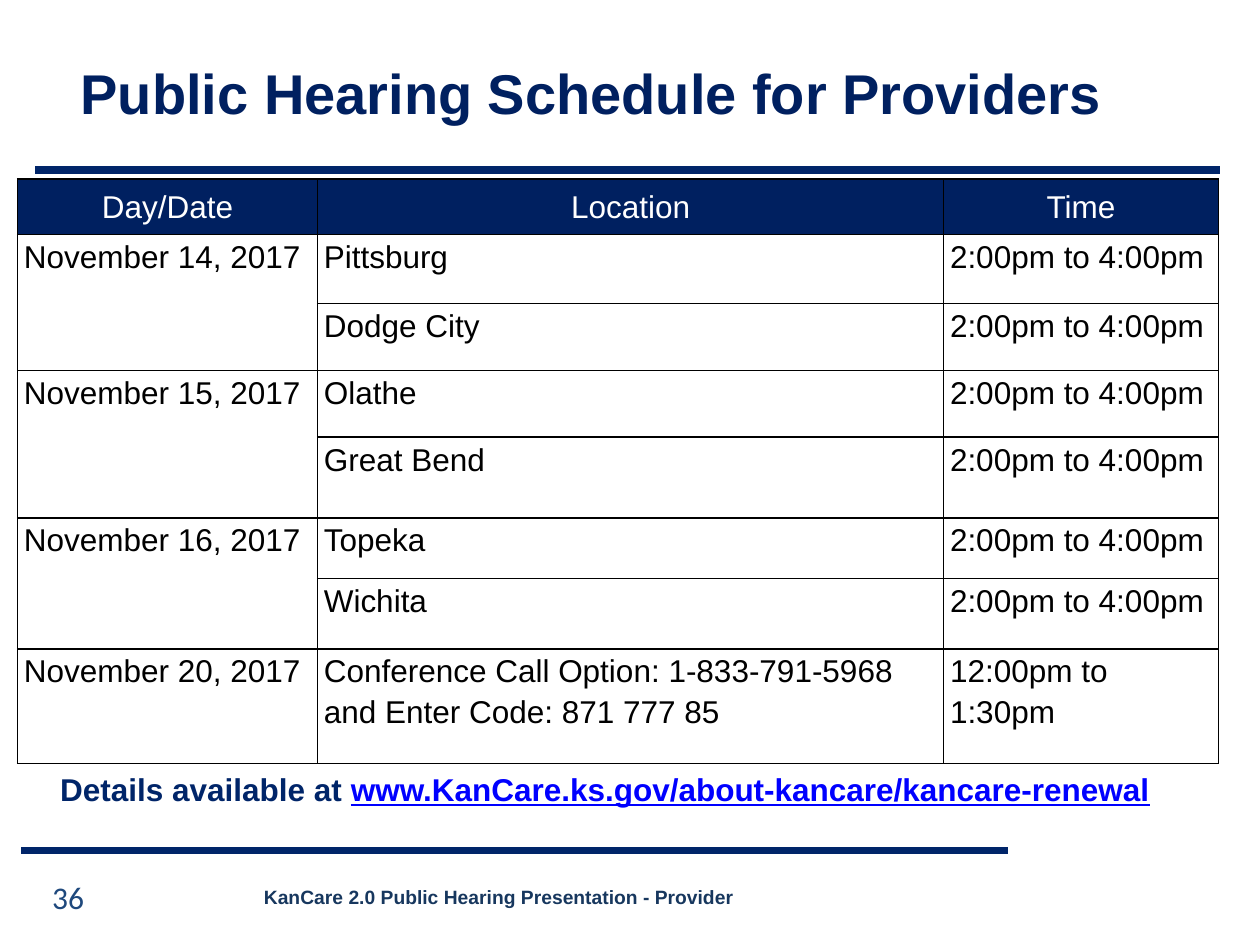
from dataclasses import dataclass

from lxml.etree import SubElement
from pptx import Presentation
from pptx.dml.color import RGBColor
from pptx.enum.text import MSO_ANCHOR as Anchor, PP_ALIGN as Align
from pptx.oxml.ns import qn
from pptx.util import Inches, Pt

NAVY, BLUE, BLACK, WHITE = "002060", "002569", "000000", "FFFFFF"
COLUMN_WIDTHS = (2.38, 4.97, 2.18)
ROW_HEIGHTS = (0.44, 0.55, 0.53, 0.53, 0.64, 0.48, 0.56, 0.91)
HEADINGS = ("Day/Date", "Location", "Time")
AFTERNOON = "2:00pm to 4:00pm"


@dataclass
class Hearing:
    location: str
    time: str = AFTERNOON


@dataclass
class Rule:
    left: float
    right: float
    top: float


SCHEDULE = {
    "November 14, 2017": [Hearing("Pittsburg"), Hearing("Dodge City")],
    "November 15, 2017": [Hearing("Olathe"), Hearing("Great Bend")],
    "November 16, 2017": [Hearing("Topeka"), Hearing("Wichita")],
    "November 20, 2017": [
        Hearing("Conference Call Option: 1-833-791-5968 and Enter Code: 871 777 85",
                "12:00pm to 1:30pm"),
    ],
}
RULES = (Rule(0.17, 8, 6.75), Rule(0.28, 9.68, 1.35))


def rgb(color: str) -> RGBColor:
    return RGBColor.from_string(color)


def style_font(font, size: float, color: str, bold: bool = False, name: str = "Arial") -> None:
    font.name, font.size, font.bold = name, Pt(size), bold
    font.color.rgb = rgb(color)


def add_text(slide, box: tuple, text: str, align=Align.LEFT, anchor=Anchor.TOP):
    """Add a wrapping text box and return its paragraph."""
    frame = slide.shapes.add_textbox(*map(Inches, box)).text_frame
    frame.word_wrap = True
    frame.vertical_anchor = anchor
    paragraph = frame.paragraphs[0]
    paragraph.text, paragraph.alignment = text, align
    return paragraph


def add_rule(slide, rule: Rule) -> None:
    top = Inches(rule.top)
    line = slide.shapes.add_connector(1, Inches(rule.left), top, Inches(rule.right), top)
    line.line.color.rgb = rgb(BLUE)
    line.line.width = Pt(4.5)
    SubElement(line._element.spPr, qn("a:effectLst"))


def add_borders(cell) -> None:
    """Draw the four cell borders, which must come before the fill."""
    properties = cell._tc.get_or_add_tcPr()
    for side in ("lnL", "lnR", "lnT", "lnB"):
        border = SubElement(properties, qn(f"a:{side}"), w=str(Pt(1)))
        fill = SubElement(border, qn("a:solidFill"))
        SubElement(fill, qn("a:srgbClr"), val=BLACK)


def fill_cell(cell, text: str, header: bool = False) -> None:
    cell.text = text
    cell.margin_left = cell.margin_right = Inches(0.05)
    cell.margin_top, cell.margin_bottom = 0, Inches(0.03)
    cell.vertical_anchor = Anchor.MIDDLE if header else Anchor.TOP
    paragraph = cell.text_frame.paragraphs[0]
    paragraph.alignment = Align.CENTER if header else Align.LEFT
    paragraph.line_spacing = 1.15
    paragraph.space_after = Pt(3 if header else 6)
    style_font(paragraph.font, 18, WHITE if header else BLACK)


def add_schedule(slide) -> None:
    frame = slide.shapes.add_table(len(ROW_HEIGHTS), len(COLUMN_WIDTHS), Inches(0.14),
                                   Inches(1.42), Inches(sum(COLUMN_WIDTHS)),
                                   Inches(sum(ROW_HEIGHTS)))
    table = frame.table
    table.horz_banding = table.first_row = False
    for column, width in zip(table.columns, COLUMN_WIDTHS):
        column.width = Inches(width)
    for index, (row, height) in enumerate(zip(table.rows, ROW_HEIGHTS)):
        row.height = Inches(height)
        for cell in row.cells:
            add_borders(cell)
            cell.fill.solid()
            cell.fill.fore_color.rgb = rgb(WHITE if index else NAVY)

    for column, heading in enumerate(HEADINGS):
        fill_cell(table.cell(0, column), heading, header=True)
    row = 1
    for date, hearings in SCHEDULE.items():
        fill_cell(table.cell(row, 0), date)
        if len(hearings) > 1:
            table.cell(row, 0).merge(table.cell(row + len(hearings) - 1, 0))
        for hearing in hearings:
            fill_cell(table.cell(row, 1), hearing.location)
            fill_cell(table.cell(row, 2), hearing.time)
            row += 1


def add_title(slide, text: str) -> None:
    title = slide.shapes.title
    title.left, title.top, title.width, title.height = map(Inches, (0.54, 0.17, 8.92, 1.08))
    frame = title.text_frame
    frame.text = text
    frame.vertical_anchor = Anchor.MIDDLE
    frame.margin_bottom = 0
    paragraph = frame.paragraphs[0]
    paragraph.alignment = Align.LEFT
    style_font(paragraph.font, 32, NAVY, bold=True)


def add_details(slide) -> None:
    paragraph = add_text(slide, (0.38, 6.06, 9.27, 0.4), "Details available at ")
    style_font(paragraph.font, 18, BLUE, bold=True)
    address = paragraph.add_run()
    address.text = "www.KanCare.ks.gov/about-kancare/kancare-renewal"
    address.font.color.rgb = rgb("0000FF")
    address.font.underline = True


def main() -> None:
    presentation = Presentation()
    presentation.slide_width, presentation.slide_height = Inches(10), Inches(7.5)
    slide = presentation.slides.add_slide(presentation.slide_layouts[5])
    add_title(slide, "Public Hearing Schedule for Providers")
    for rule in RULES:
        add_rule(slide, rule)
    number = add_text(slide, (0, 6.92, 1.08, 0.4), "36", Align.CENTER)
    style_font(number.font, 18, "1F497D", name="Calibri")
    footer = add_text(slide, (0.42, 6.92, 7.08, 0.4),
                      "KanCare 2.0 Public Hearing Presentation - Provider",
                      Align.CENTER, Anchor.MIDDLE)
    style_font(footer.font, 11, "17375E", bold=True)
    add_schedule(slide)
    add_details(slide)
    presentation.save("out.pptx")


if __name__ == "__main__":
    main()
